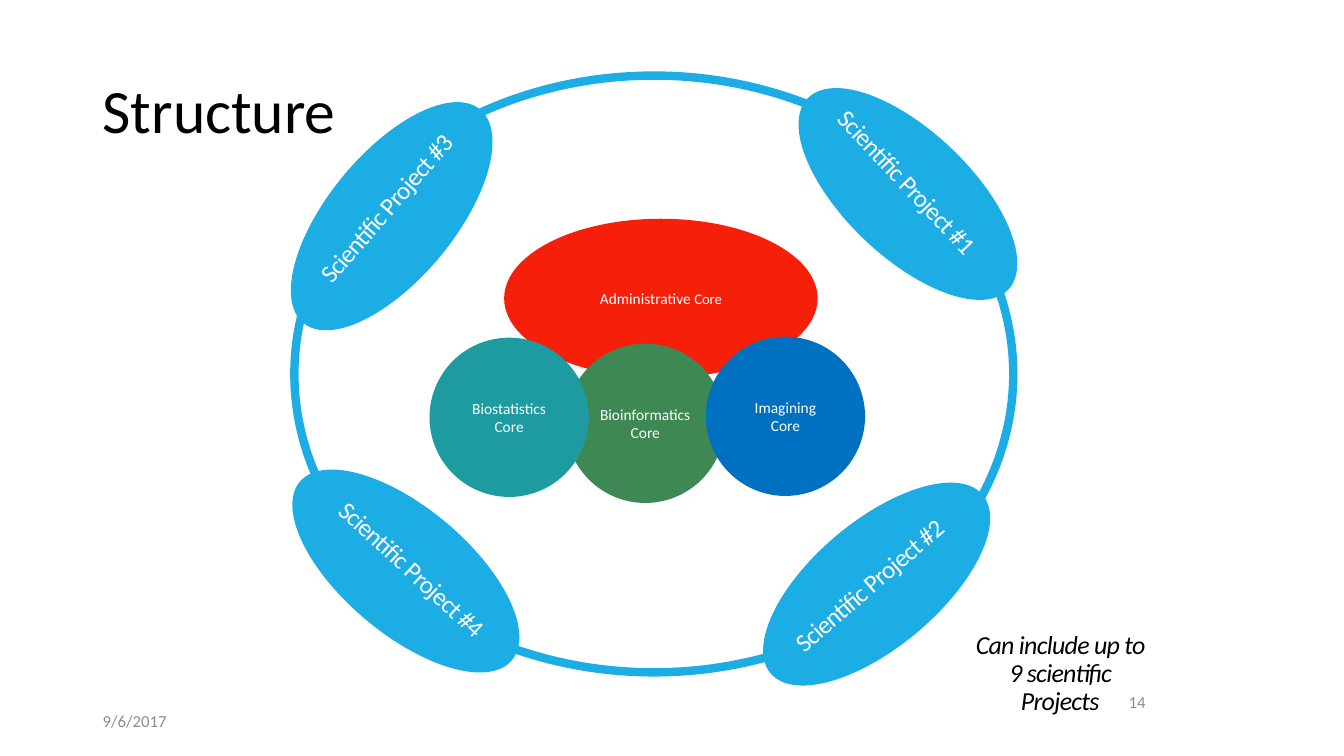
from pptx import Presentation
from pptx.dml.color import RGBColor
from pptx.enum.shapes import MSO_SHAPE
from pptx.enum.text import MSO_ANCHOR, PP_ALIGN
from pptx.util import Inches, Pt

OVAL = MSO_SHAPE.OVAL
TOP, MIDDLE = MSO_ANCHOR.TOP, MSO_ANCHOR.MIDDLE
LEFT, CENTER, RIGHT = PP_ALIGN.LEFT, PP_ALIGN.CENTER, PP_ALIGN.RIGHT

BLACK = RGBColor(0x00, 0x00, 0x00)
WHITE = RGBColor(0xFF, 0xFF, 0xFF)
GRAY = RGBColor(0x8C, 0x8C, 0x8C)
RED = RGBColor(0xF6, 0x20, 0x0A)
GREEN = RGBColor(0x3E, 0x88, 0x53)
TEAL = RGBColor(0x1D, 0x9B, 0xA1)
BLUE = RGBColor(0x00, 0x70, 0xC0)
SKY = RGBColor(0x1C, 0xAD, 0xE4)

FONT = "Calibri"
DEFAULT_INSETS = (0.1, 0.05, 0.1, 0.05)
NO_INSETS = (0, 0, 0, 0)
LABEL_PARA = {"alignment": CENTER, "line_spacing": 0.9, "space_before": Pt(6)}
LABEL_SPACING = -0.5

CORE_SIZE = 1.58
PROJECT_SIZE = (2.75, 1.25)
LABEL_SIZE = (2, 0.67)

# Offsets are measured from the left top corner of the diagram's ring.
CORES = [
    ((2.08, 1.42, 3.11, CORE_SIZE), RED, [("Administrative", 11), (" Core", 10.5)]),
    ((2.69, 2.66, CORE_SIZE, CORE_SIZE), GREEN, [("Bioinformatics Core", 11)]),
    ((1.34, 2.6, CORE_SIZE, CORE_SIZE), TEAL, [("Biostatistics Core", 11)]),
    ((4.08, 2.59, CORE_SIZE, CORE_SIZE), BLUE, [("Imagining Core", 11)]),
]
# Each project: oval offset, oval angle, label offset, label angle.
PROJECTS = [
    ((4.71, 0.55), 43.6, (4.92, 0.87), 46.7),
    ((4.4, 4.42), 319.9, (4.84, 4.88), 319.2),
    ((-0.41, 0.77), 309.6, (0.07, 1.12), 311),
    ((-0.27, 4.29), 40.1, (0.02, 4.72), 42.7),
]


def to_inches(box):
    return [Inches(length) for length in box]


def write_text(shape, spans, color, para_format, insets=DEFAULT_INSETS,
               anchor=MIDDLE, italic=False, spacing=None):
    """Fill a shape with one paragraph of (text, size) spans."""
    frame = shape.text_frame
    left, top, right, bottom = to_inches(insets)
    frame_format = {"word_wrap": True, "vertical_anchor": anchor,
                    "margin_left": left, "margin_top": top,
                    "margin_right": right, "margin_bottom": bottom}
    for name, value in frame_format.items():
        setattr(frame, name, value)
    para = frame.paragraphs[0]
    for name, value in para_format.items():
        setattr(para, name, value)
    for text, size in spans:
        span = para.add_run()
        span.text = text
        for name, value in {"name": FONT, "size": Pt(size), "italic": italic}.items():
            setattr(span.font, name, value)
        span.font.color.rgb = color
        if spacing is not None:
            span._r.get_or_add_rPr().set("spc", str(round(spacing * 100)))


def add_text(page, box, spans, color, para_format, rotation=0, **text_format):
    text_box = page.shapes.add_textbox(*to_inches(box))
    text_box.rotation = rotation
    write_text(text_box, spans, color, para_format, **text_format)


def add_label(page, box, text, size, color, rotation=0, italic=False):
    add_text(page, box, [(text, size)], color, LABEL_PARA, rotation,
             insets=NO_INSETS, anchor=TOP, italic=italic, spacing=LABEL_SPACING)


def add_oval(page, box, fill=None, rotation=0):
    oval = page.shapes.add_shape(OVAL, *to_inches(box))
    oval.shadow.inherit = False
    oval.rotation = rotation
    if fill is None:
        oval.fill.background()
    else:
        oval.fill.solid()
        oval.fill.fore_color.rgb = fill
        oval.line.fill.background()
    return oval


def add_cores(page, box):
    left, top = box[:2]
    for (x, y, width, height), fill, spans in CORES:
        oval = add_oval(page, (left + x, top + y, width, height), fill)
        write_text(oval, spans, WHITE, {"alignment": CENTER})


def add_projects(page, box):
    """Place the project ovals, the ring that joins them, and their labels."""
    left, top = box[:2]
    for (x, y), angle, _, _ in PROJECTS:
        add_oval(page, (left + x, top + y, *PROJECT_SIZE), SKY, angle)
    ring = add_oval(page, box)
    ring.line.color.rgb = SKY
    ring.line.width = Pt(6)
    for number, (_, _, (x, y), angle) in enumerate(PROJECTS, start=1):
        add_label(page, (left + x, top + y, *LABEL_SIZE),
                  f"Scientific Project #{number}", 18, WHITE, angle)


def add_title_and_footer(page, box):
    left, top, width, height = box
    add_text(page, (left, top + 0.4, width, 1.45), [("Structure", 44)], BLACK,
             {"alignment": LEFT, "line_spacing": 0.9})
    add_text(page, (left, top + height - 0.55, 3, 0.4), [("9/6/2017", 12)], GRAY,
             {"alignment": LEFT})
    add_text(page, (left + 10.16, top + height - 0.66, 0.38, 0.25), [("14", 12)],
             GRAY, {"alignment": RIGHT}, insets=(0, 0.05, 0.1, 0.05))


def build_structure_slide(deck):
    page = deck.slides.add_slide(deck.slide_layouts[6])
    diagram = (2.92, 0.75, 7.13, 5.92)
    add_title_and_footer(page, (0.92, 0, 11.5, 7.5))
    add_cores(page, diagram)
    add_projects(page, diagram)
    add_label(page, (9.64, 6.27, 1.75, 0.67), "Can include up to 9 scientific Projects",
              18.5, BLACK, italic=True)


def main():
    deck = Presentation()
    deck.slide_width, deck.slide_height = Inches(13.33), Inches(7.5)
    build_structure_slide(deck)
    deck.save("out.pptx")


if __name__ == "__main__":
    main()
